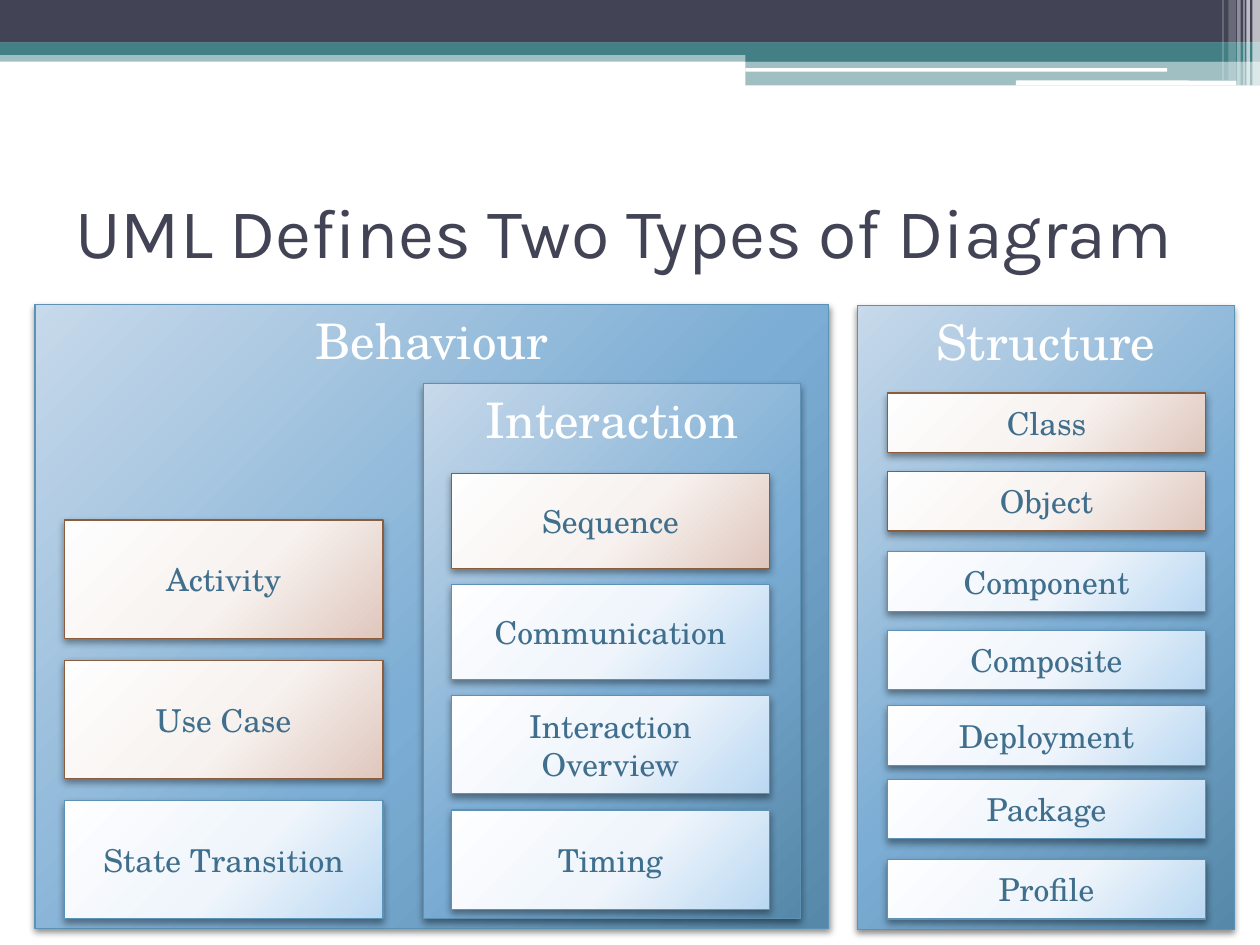
from collections import namedtuple

from pptx import Presentation
from pptx.dml.color import RGBColor
from pptx.enum.shapes import MSO_SHAPE
from pptx.enum.text import MSO_ANCHOR, PP_ALIGN
from pptx.oxml import parse_xml
from pptx.oxml.ns import nsdecls, qn
from pptx.util import Pt

RECTANGLE = MSO_SHAPE.RECTANGLE
ROUNDED = MSO_SHAPE.ROUNDED_RECTANGLE
TOP, MIDDLE = MSO_ANCHOR.TOP, MSO_ANCHOR.MIDDLE
LEFT, CENTER = PP_ALIGN.LEFT, PP_ALIGN.CENTER

Box = namedtuple("Box", "left top width height")
Theme = namedtuple("Theme", "stops line blur opacity")

INK = RGBColor(0x42, 0x44, 0x56)
TEAL = RGBColor(0x43, 0x80, 0x86)
WHITE = RGBColor(0xFF, 0xFF, 0xFF)
CARD_TEXT = RGBColor(0x40, 0x6F, 0x8D)
BLUE_LINE = RGBColor(0x5C, 0x92, 0xB5)
BROWN_LINE = RGBColor(0x8B, 0x5D, 0x3D)
PANEL_STOPS = (RGBColor(0xC7, 0xD9, 0xEA), RGBColor(0x7C, 0xAD, 0xD4), RGBColor(0x56, 0x88, 0xA9))
BLUE_STOPS = (RGBColor(0xFE, 0xFE, 0xFF), RGBColor(0xEF, 0xF5, 0xFB), RGBColor(0xBA, 0xD8, 0xF2))
BROWN_STOPS = (RGBColor(0xFE, 0xFE, 0xFE), RGBColor(0xF7, 0xF2, 0xEF), RGBColor(0xDF, 0xC7, 0xBD))

PANEL = Theme(PANEL_STOPS, BLUE_LINE, 4, 45)
BLUE = Theme(BLUE_STOPS, BLUE_LINE, 4.1, 40)
BROWN = Theme(BROWN_STOPS, BROWN_LINE, 4.1, 40)

TITLE_FONT = "Karla"
BODY_FONT = "TeX Gyre Schola"
CARD_WIDTH = 182


def write(shape, text, size, color, font=BODY_FONT, align=CENTER, anchor=MIDDLE):
    frame = shape.text_frame
    frame.word_wrap = True
    frame.vertical_anchor = anchor
    para = frame.paragraphs[0]
    para.alignment = align
    span = para.add_run()
    span.text = text
    span.font.name = font
    span.font.size = Pt(size)
    span.font.color.rgb = color


def add_block(page, box, kind=RECTANGLE):
    shape = page.shapes.add_shape(kind, *map(Pt, box))
    shape.shadow.inherit = False
    return shape


def add_band(page, box, color, opacity=100, kind=RECTANGLE):
    band = add_block(page, box, kind)
    band.fill.solid()
    band.fill.fore_color.rgb = color
    band.line.fill.background()
    if opacity < 100:
        tint = band.fill._xPr.find(qn("a:solidFill"))[0]
        tint.append(parse_xml(f'<a:alpha {nsdecls("a")} val="{opacity * 1000}"/>'))


def add_tile(page, box, theme):
    tile = add_block(page, box)
    tile.line.color.rgb = theme.line
    tile.line.width = Pt(0.75)
    tile.fill.gradient()
    properties = tile.fill._xPr
    stops = "".join(
        f'<a:gs pos="{position}"><a:srgbClr val="{color}"/></a:gs>'
        for position, color in zip((0, 55000, 100000), theme.stops)
    )
    gradient = parse_xml(
        f'<a:gradFill {nsdecls("a")} rotWithShape="1"><a:gsLst>{stops}</a:gsLst>'
        '<a:path path="circle">'
        '<a:fillToRect l="-40000" t="-90000" r="140000" b="190000"/>'
        '</a:path></a:gradFill>'
    )
    properties.replace(properties.find(qn("a:gradFill")), gradient)
    properties.find(qn("a:effectLst")).append(parse_xml(
        f'<a:outerShdw {nsdecls("a")} blurRad="{Pt(theme.blur)}" dist="{Pt(2)}" '
        'dir="5400000" rotWithShape="0"><a:srgbClr val="000000">'
        f'<a:alpha val="{theme.opacity * 1000}"/></a:srgbClr></a:outerShdw>'
    ))
    return tile


def add_panel(page, box, heading):
    write(add_tile(page, box, PANEL), heading, size=28, color=WHITE, anchor=TOP)


def add_cards(page, left, cards):
    for label, theme, top, height in cards:
        card = add_tile(page, Box(left, top, CARD_WIDTH, height), theme)
        write(card, label, size=18, color=CARD_TEXT)


def add_header(page, box):
    left, top, width, height = box
    split = left + 426
    half = width - 426
    add_band(page, Box(left, top + 28.8, width, 6.5), TEAL, opacity=50)
    add_band(page, Box(left, top, width, 24.4), INK)
    add_band(page, Box(left, top + 24.2, width, 7.2), TEAL)
    add_band(page, Box(split, top + 28, half, 7.2), TEAL)
    add_band(page, Box(split, top + 34.8, half, 14), TEAL, opacity=50)
    add_band(page, Box(split, top + 38.9, 241, 2), WHITE, kind=ROUNDED)
    add_band(page, Box(left + 580.5, top + 46, 126, 2.8), WHITE, kind=ROUNDED)
    stripes = [
        (715.7, 4.3, height, 65), (712.2, 2, height, 65), (710.5, 0.7, height, 60),
        (707, 2, height, 40), (702, 4.3, 46, 20), (698.5, 0.7, 46, 30),
    ]
    for offset, thickness, length, opacity in stripes:
        add_band(page, Box(left + offset, top, thickness, length), WHITE, opacity)


def add_title(page, box):
    title = page.shapes.add_textbox(*map(Pt, box))
    write(title, "UML Defines Two Types of Diagram", size=40, color=INK,
          font=TITLE_FONT, align=LEFT)


def add_behaviour(page, box):
    add_panel(page, box, "Behaviour")
    add_interaction(page, Box(box.left + 222, box.top + 45, 215.3, 306))
    labels = [("Activity", BROWN), ("Use Case", BROWN), ("State Transition", BLUE)]
    first, pitch = box.top + 123.2, 80.1
    add_cards(page, box.left + 16.8, [
        (label, theme, first + pitch * row, 67.7)
        for row, (label, theme) in enumerate(labels)
    ])


def add_interaction(page, box):
    add_panel(page, box, "Interaction")
    labels = [("Sequence", BROWN, 54.3), ("Communication", BLUE, 54.3),
              ("Interaction Overview", BLUE, 56), ("Timing", BLUE, 57)]
    cards, top = [], box.top + 51.6
    for label, theme, height in labels:
        cards.append((label, theme, top, height))
        top += height + 9.2
    add_cards(page, box.left + 15.8, cards)


def add_structure(page, box):
    add_panel(page, box, "Structure")
    labels = [("Class", BROWN, 50.1), ("Object", BROWN, 95), ("Component", BLUE, 140.8),
              ("Composite", BLUE, 185.6), ("Deployment", BLUE, 228.8),
              ("Package", BLUE, 270.8), ("Profile", BLUE, 316.6)]
    add_cards(page, box.left + 17, [
        (label, theme, box.top + offset, 34) for label, theme, offset in labels
    ])


def main():
    deck = Presentation()
    deck.slide_width, deck.slide_height = Pt(720), Pt(540)
    page = deck.slides.add_slide(deck.slide_layouts[6])
    add_header(page, Box(0, 0, 720, 49))
    add_title(page, Box(36, 90, 648, 84))
    add_behaviour(page, Box(20, 174, 453.6, 356.8))
    add_structure(page, Box(490, 174.5, 215.3, 356.5))
    deck.save("out.pptx")


if __name__ == "__main__":
    main()
